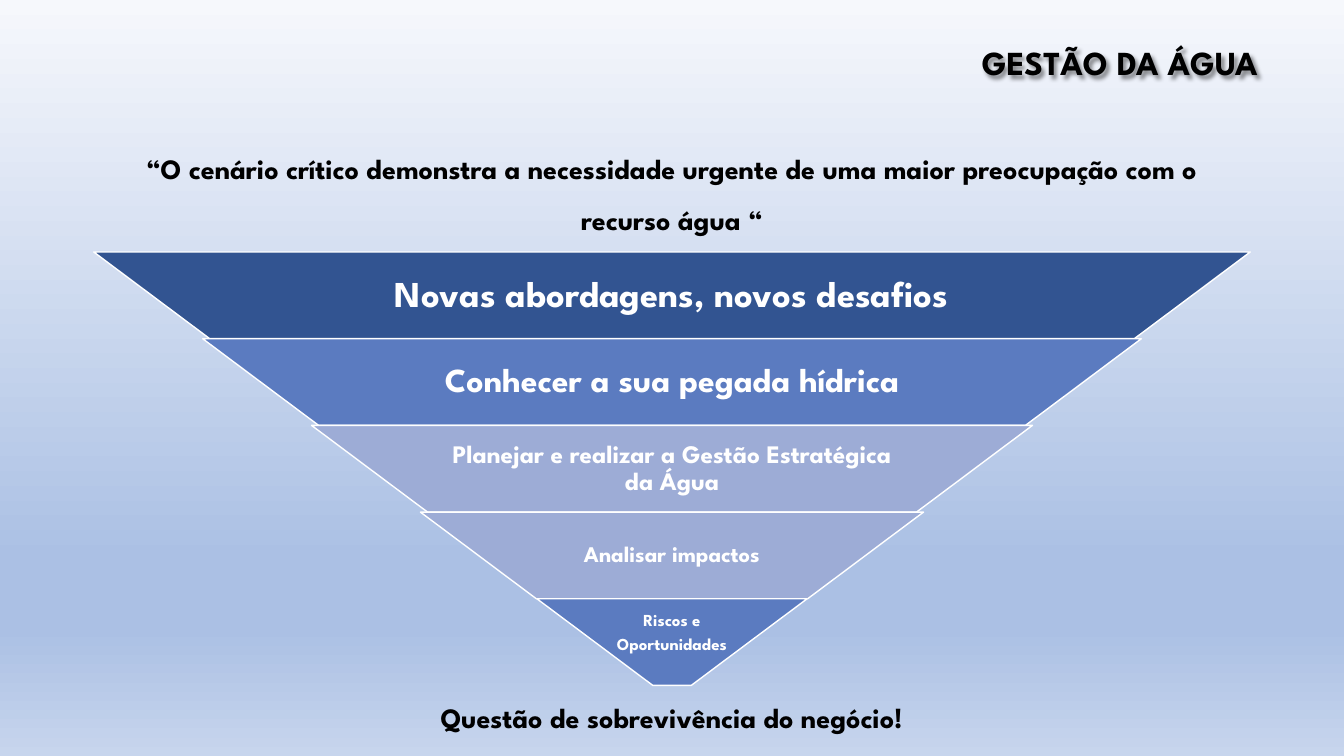
"""Build the water management slide with an inverted pyramid of five bands."""
from copy import deepcopy

from lxml import etree
from pptx import Presentation
from pptx.dml.color import RGBColor
from pptx.enum.shapes import MSO_SHAPE
from pptx.enum.text import MSO_ANCHOR, MSO_AUTO_SIZE, PP_ALIGN
from pptx.oxml import parse_xml
from pptx.oxml.ns import nsdecls, qn
from pptx.util import Inches, Pt

TRAPEZOID = MSO_SHAPE.TRAPEZOID
LEFT, CENTER = PP_ALIGN.LEFT, PP_ALIGN.CENTER
TOP, MIDDLE = MSO_ANCHOR.TOP, MSO_ANCHOR.MIDDLE
GROW, FIXED = MSO_AUTO_SIZE.SHAPE_TO_FIT_TEXT, MSO_AUTO_SIZE.NONE

BLACK = RGBColor(0x00, 0x00, 0x00)
WHITE = RGBColor(0xFF, 0xFF, 0xFF)
NAVY = RGBColor(0x32, 0x54, 0x91)
BLUE = RGBColor(0x5B, 0x7B, 0xC0)
LAVENDER = RGBColor(0x9D, 0xAC, 0xD6)
SKY_PALE = RGBColor(0xF6, 0xF8, 0xFC)
SKY_DEEP = RGBColor(0xAB, 0xC0, 0xE4)
SKY_LIGHT = RGBColor(0xC7, 0xD5, 0xED)
FONT = "League Spartan"

SLIDE_WIDTH, SLIDE_HEIGHT = 13.33, 7.5
PYRAMID_WIDTH, PYRAMID_TOP = 11.47, 2.5
BAND_HEIGHT, BAND_STEP, BAND_SLOPE = 0.86, 2.16, 1.337
TIP_WIDTH = 2.68
LABEL_SHARE = 0.65


def set_format(target, values):
    for name, value in values.items():
        setattr(target, name, value)


def add_text(left, top, width, height, lines, size, color, frame_format, paragraph_format):
    box = slide.shapes.add_textbox(Inches(left), Inches(top), Inches(width), Inches(height))
    frame = box.text_frame
    set_format(frame, frame_format)
    frame.text = "\n".join(lines)
    for paragraph in frame.paragraphs:
        set_format(paragraph, paragraph_format)
        font = paragraph.runs[0].font
        set_format(font, {"name": FONT, "size": Pt(size), "bold": True})
        font.color.rgb = color
    return box


presentation = Presentation()
presentation.slide_width = Inches(SLIDE_WIDTH)
presentation.slide_height = Inches(SLIDE_HEIGHT)
slide = presentation.slides.add_slide(presentation.slide_layouts[6])

sky = slide.background.fill
sky.gradient()
sky.gradient_angle = 270
stop_list = next(slide.element.iter(qn("a:gsLst")))
for extra in range(2):
    stop_list.append(deepcopy(stop_list[0]))
sky_stops = [(0, SKY_PALE), (0.74, SKY_DEEP), (0.83, SKY_DEEP), (1, SKY_LIGHT)]
for stop, (position, color) in zip(sky.gradient_stops, sky_stops):
    stop.position = position
    stop.color.rgb = color

title = add_text(9.64, 0.37, 3.18, 0.5, ["GESTÃO DA ÁGUA"], 24, BLACK,
                 {"word_wrap": False, "auto_size": GROW, "vertical_anchor": TOP},
                 {"alignment": LEFT})
effects = parse_xml(f"<a:effectLst {nsdecls('a')}/>")
shadow = etree.SubElement(effects, qn("a:outerShdw"), blurRad="38100", dist="38100", dir="2700000")
shadow_color = etree.SubElement(shadow, qn("a:srgbClr"), val="000000")
etree.SubElement(shadow_color, qn("a:alpha"), val="43000")
title.element.spPr.append(effects)

pyramid_left = (SLIDE_WIDTH - PYRAMID_WIDTH) / 2
add_text(pyramid_left, 1.29, PYRAMID_WIDTH, 1.11,
         ["“O cenário crítico demonstra a necessidade urgente de uma maior preocupação com o recurso água “"],
         20, BLACK, {"word_wrap": True, "auto_size": GROW, "vertical_anchor": TOP},
         {"alignment": CENTER, "line_spacing": 1.5})

bands = [
    (["Novas abordagens, novos desafios"], 26, NAVY),
    (["Conhecer a sua pegada hídrica"], 24, BLUE),
    (["Planejar e realizar a Gestão Estratégica da Água"], 18, LAVENDER),
    (["Analisar impactos"], 16, LAVENDER),
    (["Riscos e", "Oportunidades"], 12, BLUE),
]
for row, (lines, size, color) in enumerate(bands):
    is_tip = row == len(bands) - 1
    width = TIP_WIDTH if is_tip else PYRAMID_WIDTH - row * BAND_STEP
    label_width = width if is_tip else width * LABEL_SHARE
    top = PYRAMID_TOP + row * BAND_HEIGHT
    band = slide.shapes.add_shape(TRAPEZOID, Inches((SLIDE_WIDTH - width) / 2), Inches(top),
                                  Inches(width), Inches(BAND_HEIGHT))
    band.adjustments[0] = BAND_SLOPE
    band.rotation = 180
    band.shadow.inherit = False
    band.fill.solid()
    band.fill.fore_color.rgb = color
    band.line.color.rgb = WHITE
    band.line.width = Pt(1)

    inset = Inches(0.03)
    add_text((SLIDE_WIDTH - label_width) / 2, top, label_width, BAND_HEIGHT, lines, size, WHITE,
             {"word_wrap": True, "auto_size": FIXED, "vertical_anchor": MIDDLE,
              "margin_left": inset, "margin_right": inset, "margin_top": inset,
              "margin_bottom": Inches(0.2) if is_tip else inset},
             {"alignment": CENTER, "line_spacing": 0.9, "space_after": Pt(0.35 * size)})

add_text(3.92, 6.79, 5.49, 0.55, ["Questão de sobrevivência do negócio!"], 20, BLACK,
         {"word_wrap": False, "auto_size": GROW, "vertical_anchor": TOP},
         {"alignment": CENTER, "line_spacing": Pt(32)})

presentation.save("out.pptx")
